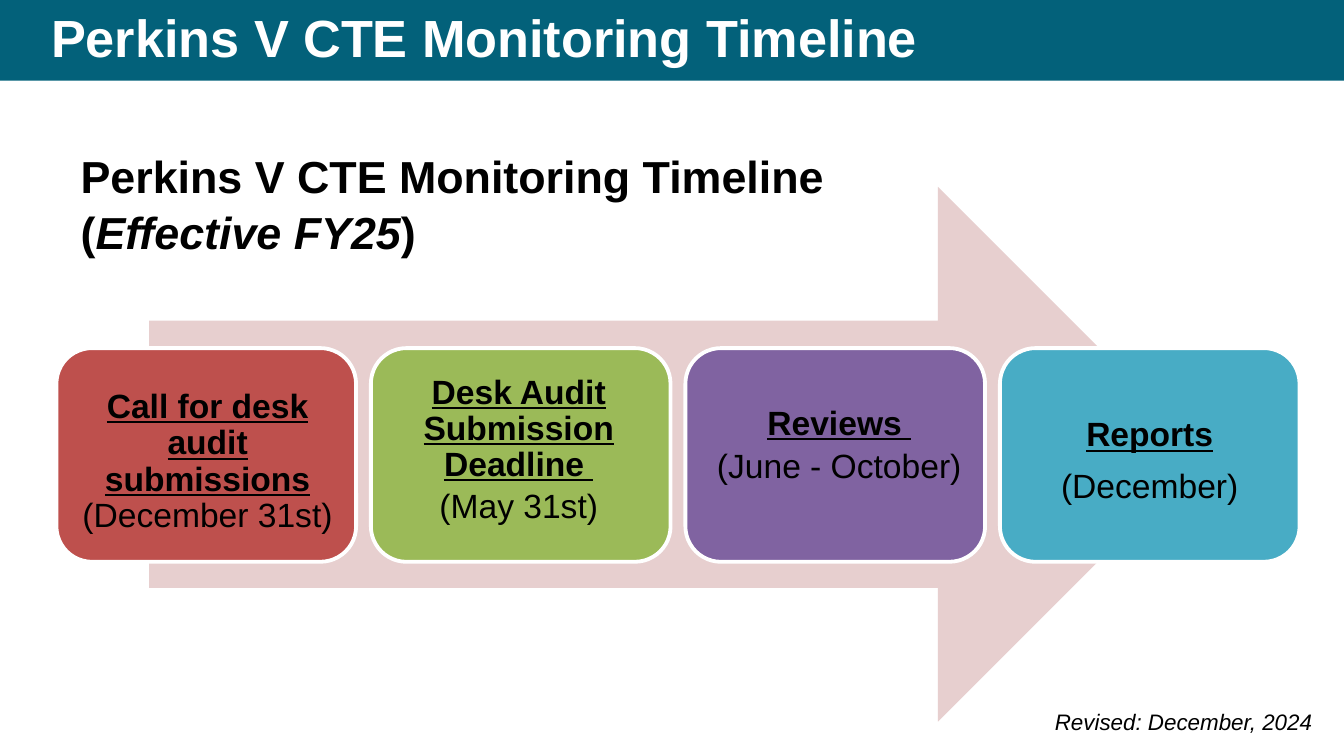
from pptx import Presentation
from pptx import util as u
from pptx.dml.color import RGBColor
from pptx.enum import shapes, text

TEAL = RGBColor(0x03, 0x61, 0x7A)
BLUSH = RGBColor(0xE7, 0xCF, 0xCF)
RED = RGBColor(0xBE, 0x50, 0x4D)
GREEN = RGBColor(0x9B, 0xBA, 0x58)
PURPLE = RGBColor(0x80, 0x63, 0xA1)
AQUA = RGBColor(0x48, 0xAC, 0xC5)
WHITE = RGBColor(0xFF, 0xFF, 0xFF)
BLACK = RGBColor(0, 0, 0)

COLUMNS, ROWS = 100, 56.25
CARD_LEFT, CARD_TOP, CARD_WIDTH, CARD_HEIGHT = 4.2, 25.9, 22.3, 15.9
CARD_PITCH = 23.4


class TimelineSlide:
    font_name = "Arial"

    def __init__(self, presentation):
        self.column = presentation.slide_width / COLUMNS
        self.row = presentation.slide_height / ROWS
        self.slide = presentation.slides.add_slide(presentation.slide_layouts[5])

    def area(self, left, top, width, height):
        return (round(left * self.column), round(top * self.row),
                round(width * self.column), round(height * self.row))

    def style(self, font, size, color, bold=None, italic=None):
        font.name = self.font_name
        font.size = u.Pt(size)
        font.color.rgb = color
        font.bold = bold
        font.italic = italic

    def title(self, wording, area):
        shape = self.slide.shapes.title
        shape.left, shape.top, shape.width, shape.height = self.area(*area)
        frame = shape.text_frame
        frame.text = wording
        frame.auto_size = text.MSO_AUTO_SIZE.NONE
        frame.vertical_anchor = text.MSO_ANCHOR.MIDDLE
        paragraph = frame.paragraphs[0]
        paragraph.alignment = text.PP_ALIGN.LEFT
        paragraph.line_spacing = 0.9
        self.style(paragraph.font, 28, WHITE, bold=True)

    def shape(self, kind, area, fill, outline=None):
        shape = self.slide.shapes.add_shape(kind, *self.area(*area))
        shape.shadow.inherit = False
        shape.fill.solid()
        shape.fill.fore_color.rgb = fill
        if outline is None:
            shape.line.fill.background()
        else:
            shape.line.color.rgb = outline
            shape.line.width = u.Pt(2.04)
        return shape

    def band(self, area, fill):
        band = self.shape(shapes.MSO_SHAPE.RECTANGLE, area, fill)
        self.slide.shapes.element.insert(2, band.element)

    def text_box(self, area, inset_top=None):
        frame = self.slide.shapes.add_textbox(*self.area(*area)).text_frame
        frame.word_wrap = True
        if inset_top is not None:
            frame.margin_left = frame.margin_right = frame.margin_bottom = 0
            frame.margin_top = u.Inches(inset_top)
        return frame

    def heading(self, lines, area):
        frame = self.text_box(area, 0.01)
        frame.margin_left = u.Inches(0.01)
        for index, pieces in enumerate(lines):
            paragraph = frame.add_paragraph() if index else frame.paragraphs[0]
            paragraph.space_before = u.Pt(1)
            self.style(paragraph.font, 24, BLACK, bold=True)
            for wording, italic in pieces:
                run = paragraph.add_run()
                run.text = wording
                run.font.italic = italic

    def label(self, area, name, date, spacing, before, inset_top, joined=False):
        frame = self.text_box(area, inset_top)
        frame.margin_left = u.Inches(0.01)
        paragraph = frame.paragraphs[0]
        for wording, strong in ((name, True), (date, False)):
            if not strong and not joined:
                paragraph = frame.add_paragraph()
            paragraph.alignment = text.PP_ALIGN.CENTER
            paragraph.line_spacing = spacing
            paragraph.space_before = u.Pt(before)
            self.style(paragraph.font, 18, BLACK)
            run = paragraph.add_run()
            run.text = wording
            run.font.bold = strong
            run.font.underline = strong

    def note(self, wording, area):
        paragraph = self.text_box(area).paragraphs[0]
        paragraph.text = wording
        self.style(paragraph.font, 12, BLACK, italic=True)


def main():
    presentation = Presentation()
    presentation.slide_width = u.Inches(10)
    presentation.slide_height = u.Pt(405)
    timeline = TimelineSlide(presentation)

    timeline.band((0, 0, COLUMNS, 6), TEAL)
    timeline.title("Perkins V CTE Monitoring Timeline", (2.8, 0, 92.4, 6))
    timeline.shape(shapes.MSO_SHAPE.RIGHT_ARROW, (11.1, 13.9, 78.6, 39.8), BLUSH)
    timeline.heading(
        [[("Perkins V CTE Monitoring Timeline", False)],
         [("(", False), ("Effective FY25", True), (")", False)]],
        (5.9, 11, 63.3, 8.4))

    steps = [
        (RED, (0.7, 28.5, 21, 11.4),
         ("Call for desk audit submissions", " (December 31st)", 0.9, 3.7, 0.05, True)),
        (GREEN, (0.5, 27.5, 20.9, 11.8),
         ("Desk Audit Submission Deadline ", "(May 31st)", 0.9, 3.2, 0.04)),
        (PURPLE, (2.2, 29.7, 18.4, 6.6),
         ("Reviews ", "(June - October)", 0.91, 3.6, 0.05)),
        (AQUA, (3.8, 30, 14.6, 7.3),
         ("Reports", "(December)", u.Pt(26.4), 1, 0.01)),
    ]
    for index, (color, (offset, top, width, height), wording) in enumerate(steps):
        left = CARD_LEFT + index * CARD_PITCH
        timeline.shape(shapes.MSO_SHAPE.ROUNDED_RECTANGLE,
                       (left, CARD_TOP, CARD_WIDTH, CARD_HEIGHT), color, WHITE)
        timeline.label((left + offset, top, width, height), *wording)

    timeline.note("Revised: December, 2024", (77.5, 52.2, 22.5, 3))
    presentation.save("out.pptx")


if __name__ == "__main__":
    main()
